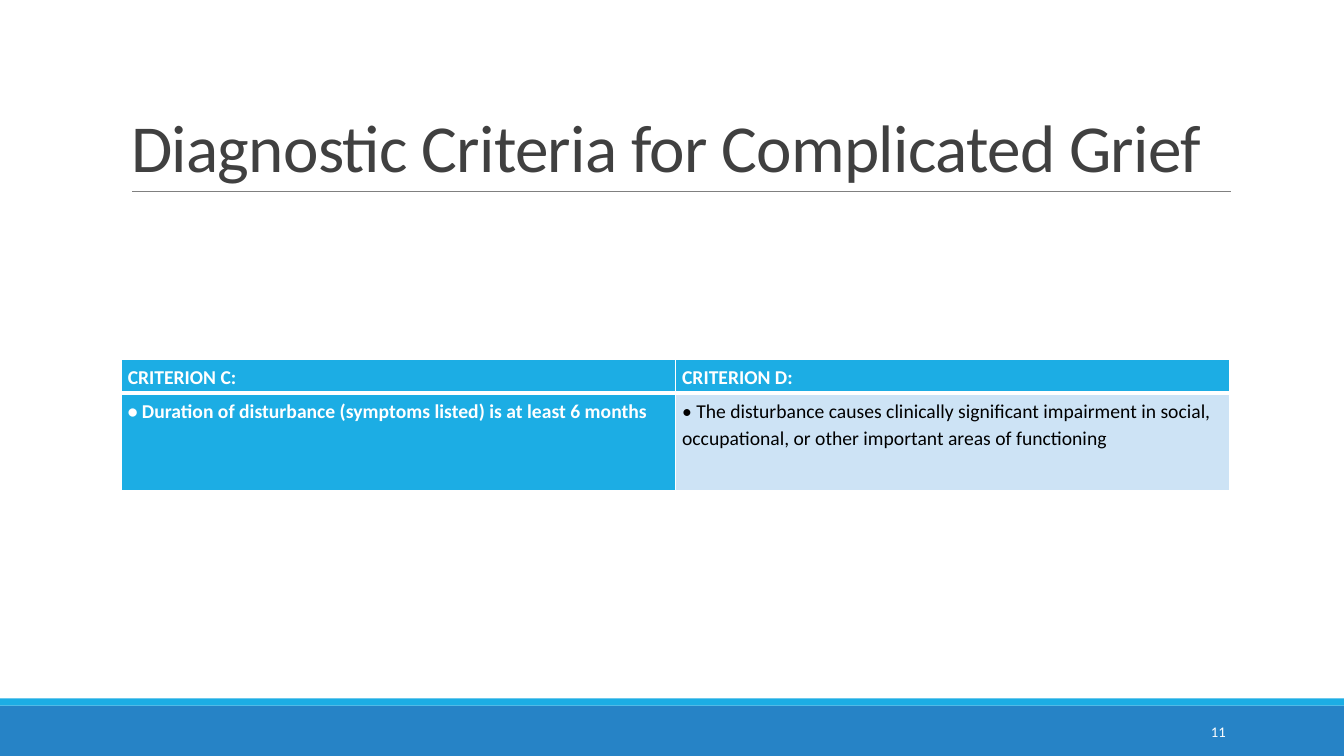
from lxml.etree import SubElement
from pptx import Presentation
from pptx.dml.color import RGBColor
from pptx.enum.shapes import MSO_CONNECTOR, MSO_SHAPE
from pptx.enum.text import MSO_ANCHOR, MSO_AUTO_SIZE, PP_ALIGN
from pptx.oxml import parse_xml
from pptx.oxml.ns import nsdecls, qn
from pptx.util import Cm, Pt

FONT = "Calibri"
WHITE = RGBColor(0xFF, 0xFF, 0xFF)
BLACK = RGBColor(0, 0, 0)
DARK = RGBColor(0x40, 0x40, 0x40)
GRAY = RGBColor(0x80, 0x80, 0x80)
CYAN = RGBColor(0x1C, 0xAD, 0xE4)
BLUE = RGBColor(0x26, 0x83, 0xC6)
PALE = RGBColor(0xCD, 0xE3, 0xF5)

WIDTH, HEIGHT = Cm(33.87), Cm(19.05)
ROWS = [
    ("CRITERION C:", "CRITERION D:"),
    ("• Duration of disturbance (symptoms listed) is at least 6 months",
     "• The disturbance causes clinically significant impairment in social, "
     "occupational, or other important areas of functioning"),
]


def style(para, size, color, bold=False):
    font = para.font
    font.name, font.size, font.bold = FONT, Pt(size), bold
    font.color.rgb = color


def add_band(slide, left, top, width, height, color):
    band = slide.shapes.add_shape(MSO_SHAPE.RECTANGLE, left, top, width, height)
    band.shadow.inherit = False
    band.fill.solid()
    band.fill.fore_color.rgb = color
    band.line.fill.background()


def add_footer(slide, left, top, width, height, number):
    strip = Cm(0.18)
    add_band(slide, left, top + strip, width, height - strip, BLUE)
    add_band(slide, left, top, width, strip, CYAN)
    box = slide.shapes.add_textbox(left + Cm(27.51), top + Cm(0.33), Cm(3.63), Cm(1.02))
    frame = box.text_frame
    frame.word_wrap = True
    frame.vertical_anchor = MSO_ANCHOR.MIDDLE
    frame.text = number
    para = frame.paragraphs[0]
    para.alignment = PP_ALIGN.RIGHT
    style(para, 10.5, WHITE)


def add_title(slide, left, top, width, height, text):
    """Fill the title placeholder and rule a line along its foot."""
    title = slide.shapes.title
    title.left, title.top, title.width, title.height = left, top, width, height
    frame = title.text_frame
    frame.text = text
    frame.word_wrap = True
    frame.auto_size = MSO_AUTO_SIZE.NONE
    frame.vertical_anchor = MSO_ANCHOR.BOTTOM
    para = frame.paragraphs[0]
    para.alignment = PP_ALIGN.LEFT
    para.line_spacing = 0.85
    style(para, 48, DARK)
    para.runs[0].font._element.set("spc", "-50")

    foot = top + height
    rule = slide.shapes.add_connector(
        MSO_CONNECTOR.STRAIGHT, left + Cm(0.28), foot, left + width + Cm(0.02), foot)
    rule.line.color.rgb = GRAY
    rule.line.width = Pt(0.5)
    SubElement(rule._element.spPr, qn("a:effectLst"))


def set_edges(cell, top, foot):
    """Draw white borders; top and foot are widths in points."""
    props = cell._tc.get_or_add_tcPr()
    for i, (side, size) in enumerate(zip("LRTB", (1, 1, top, foot))):
        props.insert(i, parse_xml(
            f'<a:ln{side} {nsdecls("a")} w="{Pt(size)}"><a:solidFill>'
            f'<a:srgbClr val="{WHITE}"/></a:solidFill></a:ln{side}>'))


def add_grid(slide, left, top, width, heights):
    table = slide.shapes.add_table(
        len(ROWS), len(ROWS[0]), left, top, width, sum(heights)).table
    for row, height in zip(table.rows, heights):
        row.height = height
    for r, texts in enumerate(ROWS):
        for c, text in enumerate(texts):
            cell = table.cell(r, c)
            strong = r == 0 or c == 0
            cell.text = text
            cell.margin_left = cell.margin_right = Cm(0.17)
            cell.margin_top = cell.margin_bottom = Cm(0.08)
            cell.fill.solid()
            cell.fill.fore_color.rgb = CYAN if strong else PALE
            para = cell.text_frame.paragraphs[0]
            para.line_spacing = Pt(19.6)
            style(para, 14, WHITE if strong else BLACK, strong)
            set_edges(cell, 3 if r else 1, 1 if r else 3)


def main():
    deck = Presentation()
    deck.slide_width, deck.slide_height = WIDTH, HEIGHT
    slide = deck.slides.add_slide(deck.slide_layouts[5])
    left, width = Cm(3.05), Cm(27.94)
    add_footer(slide, 0, Cm(17.6), WIDTH, HEIGHT - Cm(17.6), "11")
    add_title(slide, left, Cm(0.79), width, Cm(4.04),
              "Diagnostic Criteria for Complicated Grief")
    add_grid(slide, left, Cm(9.05), width, (Cm(0.85), Cm(2.46)))
    deck.save("out.pptx")


if __name__ == "__main__":
    main()
